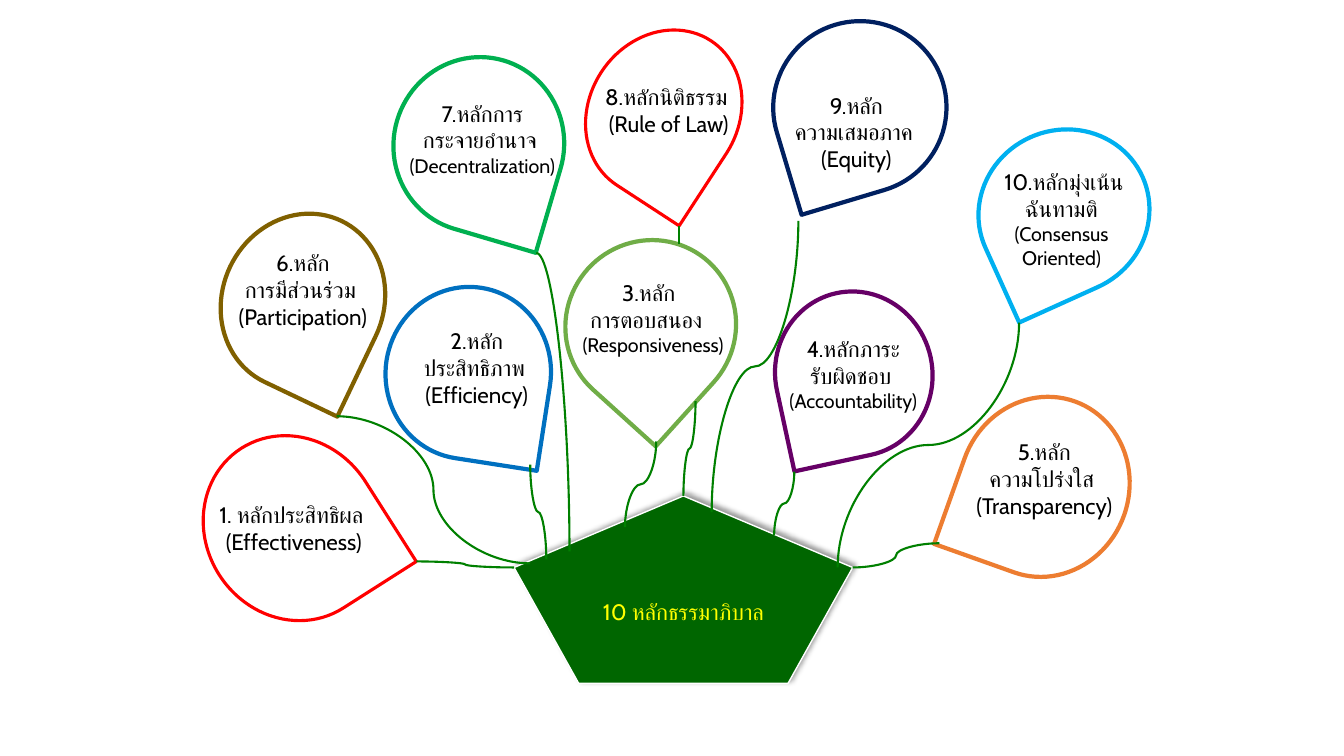
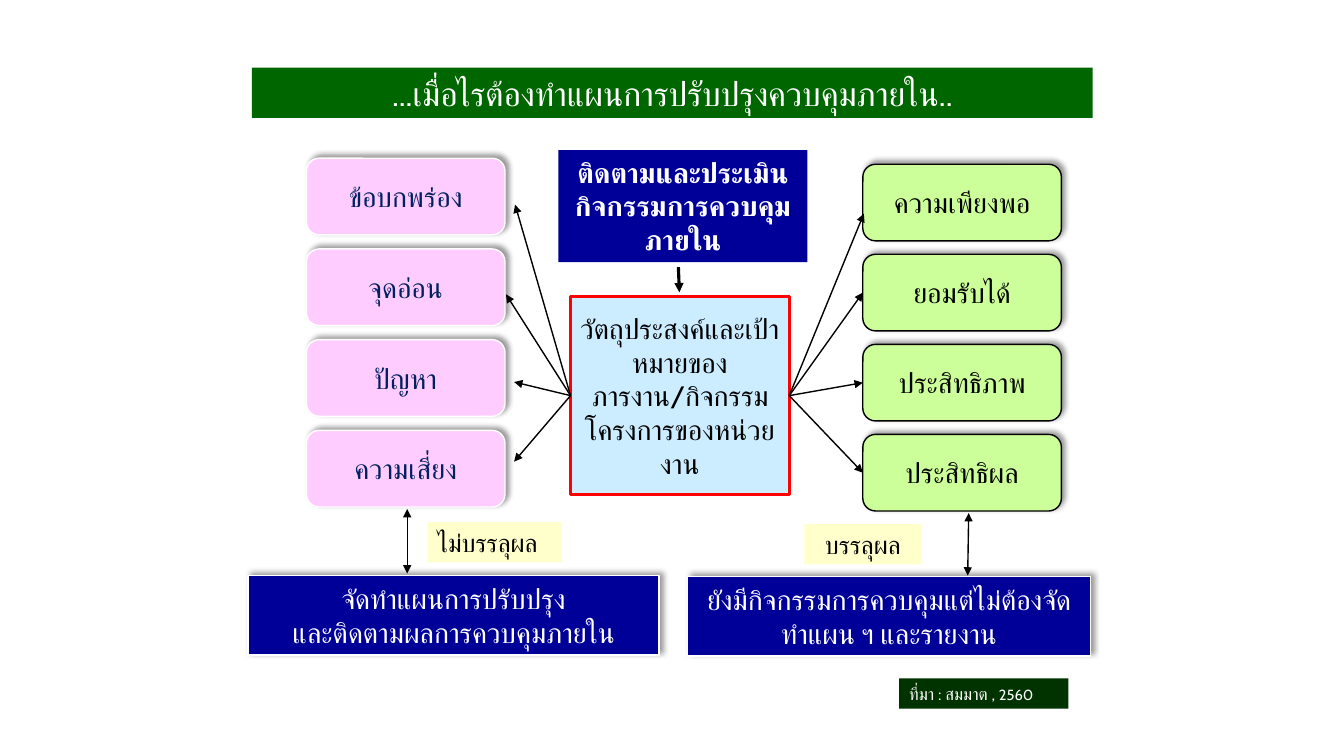
"""Build two slides on good governance and internal control."""
import pptx
import pptx.util
import pptx.dml.color
import pptx.enum.shapes
import pptx.enum.text
import pptx.oxml
import pptx.oxml.ns
from lxml import etree

SHAPE = pptx.enum.shapes.MSO_SHAPE
LINK = pptx.enum.shapes.MSO_CONNECTOR
ANCHOR = pptx.enum.text.MSO_ANCHOR
ALIGN = pptx.enum.text.PP_ALIGN
FIT = pptx.enum.text.MSO_AUTO_SIZE
qn = pptx.oxml.ns.qn

FONT = "Cabin"
COLS, ROWS = 133.33, 75
CELL = pptx.util.Inches(0.1)
C = {
    "white": "FFFFFF", "black": "000000", "yellow": "FFFF00", "red": "FF0000",
    "green": "006600", "stem": "008000", "dark": "003300", "navy": "002060",
    "blue": "000099", "sky": "CCECFF", "lime": "CCFF99", "pink": "FFCCFF",
    "cream": "FFFFCC", "azure": "0070C0", "olive": "806000", "purple": "660066",
    "emerald": "00B050", "leaf": "70AD47", "orange": "ED7D31", "cyan": "00B0F0",
}

BALLOONS = [
    ("azure", 98.8, (37.9, 28.8, 17.1, 16.4), (2.2, 3.2, 14.4), 0,
     ["2.หลัก", "ประสิทธิภาพ ", "(Efficiency)"]),
    ("olive", 115.5, (21.2, 21.9, 17.7, 16), (0.9, 2.3, 15.9), 0,
     ["6.หลัก", "การมีส่วนร่วม ", "(Participation)"]),
    ("red", 57.5, (19.6, 43.8, 18.8, 17.2), (-0.3, 5.4, 19.2), 0,
     ["1. หลักประสิทธิผล", " (Effectiveness)"]),
    ("purple", 167.8, (76.9, 28.9, 15.6, 16.4), (-2.4, 3.9, 20.3), 1,
     ["4.หลักภาระ", "รับผิดชอบ ", "(Accountability)"]),
    ("emerald", 106.4, (38.8, 5.9, 17.4, 16.9), (-0.4, 3.5, 18.9), 1,
     ["7.หลักการ", "กระจายอำนาจ ", "(Decentralization)"]),
    ("leaf", 132.1, (56, 23.9, 17.1, 16.8), (-1.1, 3.3, 18.9), 1,
     ["3.หลัก", "การตอบสนอง ", "  (Responsiveness)"]),
    ("red", 123.1, (57.3, 3.8, 17.1, 14.8), (0.8, 4, 16), 0,
     ["8.หลักนิติธรรม", " (Rule of Law)"]),
    ("navy", 163.3, (76.7, 2.1, 17.2, 17.1), (0.1, 6.5, 16.3), 0,
     ["9.หลัก", "ความเสมอภาค ", "(Equity)"]),
    ("orange", 199.6, (95.2, 39.3, 16.8, 18), (0, 3.7, 16.8), 0,
     ["5.หลัก", "ความโปร่งใส ", "(Transparency)"]),
    ("cyan", 155.7, (97, 12.9, 17.1, 16.3), (0.9, 3.3, 15.3), 2,
     ["10.หลักมุ่งเน้น", "ฉันทามติ ", "(Consensus ", "Oriented) "]),
]
UPRIGHT_STEMS = [
    (101.1, 32, 83.1, 56.3), (78.8, 46.8, 76.8, 53.1), (52.6, 46.1, 54.2, 55.5),
    (65.1, 43.8, 62, 52.3), (69, 39.8, 67.8, 49.2), (79.2, 21.9, 70.6, 50.8),
]
LEVEL_STEMS = [
    (41.3, 55.7, 51, 56.3), (84.6, 56.3, 93.2, 53.9), (52.6, 55.9, 33.4, 41.3),
]


def rgb(name):
    """Return the named colour."""
    return pptx.dml.color.RGBColor.from_string(C[name])


def cells(*values):
    """Turn grid cells into slide lengths."""
    return [round(v * CELL) for v in values]


def sub(box, x, y, w, h):
    """Return a box placed from the corner of another."""
    return box[0] + x, box[1] + y, w, h


def write(tf, lines, size, color, align=ALIGN.CENTER, bold=None):
    """Fill a text frame with one paragraph for each line."""
    for i, line in enumerate(lines):
        p = tf.paragraphs[0] if i == 0 else tf.add_paragraph()
        p.alignment = align
        p.font.name, p.font.size, p.font.bold = FONT, pptx.util.Pt(size), bold
        p.font.color.rgb = rgb(color)
        props = p._p.pPr.find(qn("a:defRPr"))
        etree.SubElement(props, qn("a:cs")).set("typeface", FONT)
        p.add_run().text = line


def panel(s, kind, box, fill, line=None, width=1, shadow=False, anchor=ANCHOR.MIDDLE):
    """Draw a filled shape, with or without outline and shadow."""
    sp = s.shapes.add_shape(kind, *cells(*box))
    sp.shadow.inherit = False
    sp.fill.solid()
    sp.fill.fore_color.rgb = rgb(fill)
    if line:
        sp.line.color.rgb, sp.line.width = rgb(line), pptx.util.Pt(width)
    else:
        sp.line.fill.background()
    if shadow:
        effects = sp._element.spPr.find(qn("a:effectLst"))
        effects.append(pptx.oxml.parse_xml(
            f'<a:outerShdw {pptx.oxml.ns.nsdecls("a")} blurRad="50800" dist="38100" '
            'dir="18900000" algn="bl" rotWithShape="0"><a:srgbClr val="000000">'
            '<a:alpha val="40000"/></a:srgbClr></a:outerShdw>'))
    sp.text_frame.word_wrap = True
    sp.text_frame.vertical_anchor = anchor
    return sp


def link(s, kind, ends, color="black", width=1, heads=()):
    """Draw a connector with arrowheads at the named ends."""
    c = s.shapes.add_connector(kind, *cells(*ends))
    c.line.color.rgb, c.line.width = rgb(color), pptx.util.Pt(width)
    for end in heads:
        etree.SubElement(c.line._get_or_add_ln(), qn(f"a:{end}")).set("type", "triangle")
    etree.SubElement(c._element.spPr, qn("a:effectLst"))
    return c


def stem(s, box, ends, kind=LINK.CURVE):
    """Draw a green stem placed from the corner of the box."""
    x1, y1, x2, y2 = ends
    dx, dy = box[:2]
    return link(s, kind, (x1 + dx, y1 + dy, x2 + dx, y2 + dy), "stem", 1.5)


def upright_stem(s, box, ends):
    """Draw a stem that leaves and arrives vertically."""
    x1, y1, x2, y2 = ends
    cx, cy = (x1 + x2) / 2, (y1 + y2) / 2
    half_w, half_h = (y2 - y1) / 2, abs(x2 - x1) / 2
    side = 1 if x2 < x1 else -1
    c = stem(s, box, (cx - side * half_w, cy - half_h, cx + side * half_w, cy + half_h))
    turn = 90 if side == 1 else 270
    c._element.spPr.find(qn("a:xfrm")).set("rot", str(turn * 60000))


def balloon(s, box, color, turn, label, small, lines):
    """Draw a teardrop and its label, the last lines of it small."""
    sp = panel(s, SHAPE.TEAR, box, "white", color, 2.25 if color == "red" else 3)
    sp.rotation = turn
    x, y, w = label
    tb = s.shapes.add_textbox(*cells(*sub(box, x, y, w, 2.7 * len(lines) + 1)))
    tf = tb.text_frame
    tf.word_wrap, tf.auto_size = False, FIT.SHAPE_TO_FIT_TEXT
    write(tf, lines, 16, "black")
    for p in tf.paragraphs[len(lines) - small:]:
        p.font.size = pptx.util.Pt(14)


def principles(s, box):
    """Draw ten balloons tied to a pentagon."""
    sp = panel(s, SHAPE.REGULAR_PENTAGON, sub(box, 51, 49.2, 33.6, 18.6),
               "green", "white", shadow=True)
    write(sp.text_frame, ["10 หลักธรรมาภิบาล"], 16, "yellow")
    for color, turn, place, label, small, lines in BALLOONS:
        balloon(s, sub(box, *place), color, turn, label, small, lines)
    for ends in UPRIGHT_STEMS:
        upright_stem(s, box, ends)
    for ends in LEVEL_STEMS:
        stem(s, box, ends)
    stem(s, box, (67.4, 22.4, 67.4, 24.2), LINK.STRAIGHT)
    bend = stem(s, box, (53.2, 25.1, 56.5, 54.7))
    bend._element.spPr.find(qn("a:prstGeom")).set("prst", "curvedConnector2")


def stack(s, box, labels, fill, line, color):
    """Draw equally spaced rounded boxes that fill the box."""
    x, y, w, h = box
    tall = 7.6
    pitch = (h - tall) / (len(labels) - 1)
    shapes = []
    for i, label in enumerate(labels):
        sp = panel(s, SHAPE.ROUNDED_RECTANGLE, (x, y + i * pitch, w, tall),
                   fill, line, shadow=True)
        write(sp.text_frame, [label], 20, color)
        shapes.append(sp)
    return shapes


def banner(s, box, lines, size, fill, **style):
    """Draw a plain coloured box with text from its top."""
    sp = panel(s, SHAPE.RECTANGLE, box, fill, anchor=ANCHOR.TOP)
    color = "black" if fill == "cream" else "white"
    write(sp.text_frame, lines, size, color, **style)
    return sp


def outcome(s, box, lines):
    """Draw a blue result box with a shadow."""
    sp = panel(s, SHAPE.RECTANGLE, box, "blue", "white", shadow=True)
    write(sp.text_frame, lines, 20, "white")


def goal(s, box):
    """Draw the central objective box."""
    sp = panel(s, SHAPE.RECTANGLE, box, "sky", "red", 2.25)
    write(sp.text_frame, ["วัตถุประสงค์และเป้าหมายของ",
                          "ภารงาน/กิจกรรมโครงการของหน่วยงาน"], 20, "black")
    return sp


def control_plan(s, box):
    """Draw the flow that tells when a control plan is needed."""
    x, y = box[:2]
    met = stack(s, sub(box, 85.6, 16.3, 19.7, 34.4),
                ["ความเพียงพอ", "ยอมรับได้", "ประสิทธิภาพ", "ประสิทธิผล"],
                "lime", "black", "black")
    stack(s, sub(box, 30.4, 15.7, 19.7, 34.6),
          ["ข้อบกพร่อง", "จุดอ่อน", "ปัญหา", "ความเสี่ยง"], "pink", "white", "navy")
    outcome(s, sub(box, 24.6, 57.1, 40.8, 7.9),
            ["จัดทำแผนการปรับปรุง", "และติดตามผลการควบคุมภายใน"])
    outcome(s, sub(box, 68.2, 57.2, 40, 7.9),
            ["ยังมีกิจกรรมการควบคุมแต่ไม่ต้องจัดทำแผน ฯ และรายงาน"])
    centre = goal(s, sub(box, 56.6, 29.4, 21.7, 19.7))
    for i, sp in enumerate(met):
        c = link(s, LINK.STRAIGHT, (x + 78.3, y + 39.2, x + 85.7, y + 21.2), heads=["tailEnd"])
        c.begin_connect(centre, 3)
        if i:
            c.end_connect(sp, 1)
    for tip_x, tip_y in [(51.1, 20.3), (50.2, 29.2), (51, 37.9), (51, 45.8)]:
        c = link(s, LINK.STRAIGHT, (x + 56.6, y + 39.2, x + tip_x, y + tip_y), heads=["tailEnd"])
        c.begin_connect(centre, 1)
    for x1, y1, x2, y2 in [(96.1, 50.9, 96, 57.1), (40.4, 50.5, 40.4, 56.9)]:
        link(s, LINK.STRAIGHT, (x + x1, y + y1, x + x2, y + y2), heads=["headEnd", "tailEnd"])
    link(s, LINK.STRAIGHT, (x + 67.3, y + 26.5, x + 67.4, y + 29), width=2.25, heads=["tailEnd"])
    banner(s, sub(box, 25, 6.7, 83.4, 5),
           ["...เมื่อไรต้องทำแผนการปรับปรุงควบคุมภายใน.."], 24, "green")
    banner(s, sub(box, 55.4, 14.9, 24.7, 11.1),
           ["ติดตามและประเมินกิจกรรมการควบคุมภายใน"], 20, "blue", bold=True)
    banner(s, sub(box, 42.4, 51.8, 13.3, 4), ["ไม่บรรลุผล"], 18, "cream", align=ALIGN.LEFT)
    banner(s, sub(box, 79.8, 52, 11.6, 4), ["บรรลุผล"], 18, "cream")
    sp = banner(s, sub(box, 89.2, 67.3, 16.8, 3), ["ที่มา : สมมาต , "], 12, "dark",
                align=ALIGN.LEFT)
    r = sp.text_frame.paragraphs[0].add_run()
    r.text, r.font.size = "2560", pptx.util.Pt(10.5)


def main():
    """Build and save the deck."""
    prs = pptx.Presentation()
    prs.slide_width, prs.slide_height = cells(COLS, ROWS)
    for draw in (principles, control_plan):
        draw(prs.slides.add_slide(prs.slide_layouts[6]), (0, 0, COLS, ROWS))
    prs.save("out.pptx")


if __name__ == "__main__":
    main()
